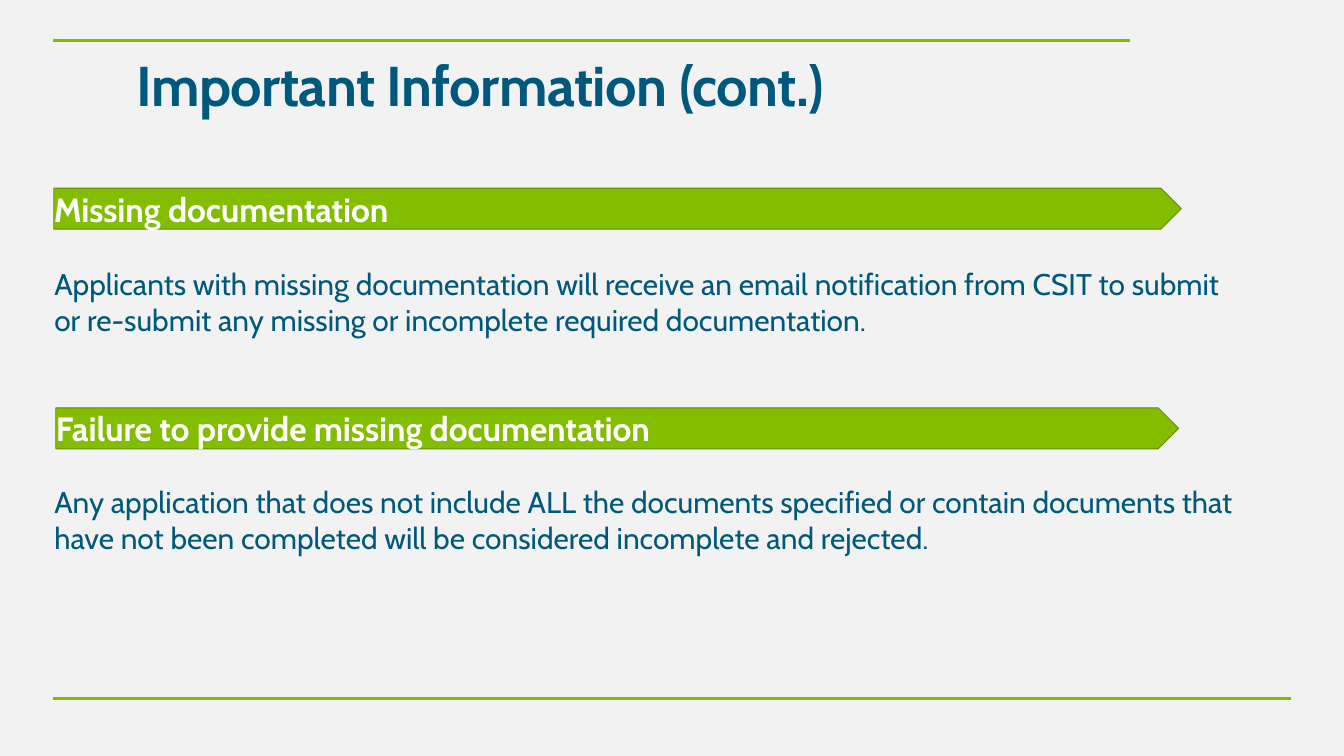
from pptx import Presentation
from pptx import util as u
from pptx.dml.color import RGBColor
from pptx.enum import shapes, text
from pptx.oxml.ns import qn
from lxml import etree

COLORS = {
    "background": "F2F2F2",
    "rule": "84BD00",
    "bar": "83BD00",
    "bar_edge": "618C00",
    "title": "00597C",
    "body": "00587B",
    "heading": "FFFFFF",
}
FONT = "Cabin"
COLUMNS, ROWS = 20, 11.25

SECTIONS = [
    {
        "heading": "Missing documentation",
        "bar": (0.8, 2.8, 16.78, 0.61),
        "body": "Applicants with missing documentation will receive an email notification "
                "from CSIT to submit or re-submit any missing or incomplete required documentation.",
        "body_box": (0.71, 3.9, 17.78, 1.18),
    },
    {
        "heading": "Failure to provide missing documentation",
        "bar": (0.83, 6.07, 16.71, 0.61),
        "body": "Any application that does not include ALL the documents specified or contain "
                "documents that have not been completed will be considered incomplete and rejected.",
        "body_box": (0.71, 7.15, 18.25, 1.18),
    },
]


def color(name):
    return RGBColor.from_string(COLORS[name])


def write(tf, content, *, size, fill, bold=False, spacing=0, inset=None,
          anchor=text.MSO_ANCHOR.TOP):
    tf.word_wrap = True
    tf.auto_size = text.MSO_AUTO_SIZE.NONE
    tf.vertical_anchor = anchor
    if inset is not None:
        tf.margin_left = tf.margin_right = tf.margin_top = tf.margin_bottom = u.Inches(inset)
    p = tf.paragraphs[0]
    p.alignment = text.PP_ALIGN.LEFT
    r = p.add_run()
    r.text = content
    r.font.name, r.font.size, r.font.bold = FONT, u.Pt(size), bold
    r.font.color.rgb = color(fill)
    if spacing:
        r.font._element.set("spc", str(round(spacing * 100)))


class Deck:
    """Holds the grid, the style and the current slide."""

    def __init__(self):
        self.prs = Presentation()
        self.prs.slide_width, self.prs.slide_height = u.Inches(20), u.Inches(11.25)
        self.column = self.prs.slide_width / COLUMNS
        self.row = self.prs.slide_height / ROWS
        self.s = self.prs.slides.add_slide(self.prs.slide_layouts[5])
        fill = self.s.background.fill
        fill.solid()
        fill.fore_color.rgb = color("background")

    def box(self, x, y, w, h):
        return (round(x * self.column), round(y * self.row),
                round(w * self.column), round(h * self.row))

    def rule(self, left, right, y):
        x1, y1, w, _ = self.box(left, y, right - left, 0)
        line = self.s.shapes.add_connector(shapes.MSO_CONNECTOR.STRAIGHT, x1, y1, x1 + w, y1)
        line.line.color.rgb, line.line.width = color("rule"), u.Pt(3)
        etree.SubElement(line._element.spPr, qn("a:effectLst"))

    def title(self, content, box):
        sp = self.s.shapes.title
        sp.left, sp.top, sp.width, sp.height = self.box(*box)
        write(sp.text_frame, content, size=60, fill="title", bold=True, spacing=-0.6,
              inset=0, anchor=text.MSO_ANCHOR.MIDDLE)

    def bar(self, content, box):
        sp = self.s.shapes.add_shape(shapes.MSO_SHAPE.PENTAGON, *self.box(*box))
        sp.shadow.inherit = False
        sp.fill.solid()
        sp.fill.fore_color.rgb = color("bar")
        sp.line.color.rgb, sp.line.width = color("bar_edge"), u.Pt(1)
        write(sp.text_frame, content, size=36, fill="heading", bold=True, spacing=-0.1,
              inset=0, anchor=text.MSO_ANCHOR.MIDDLE)

    def body(self, content, box):
        sp = self.s.shapes.add_textbox(*self.box(*box))
        write(sp.text_frame, content, size=32, fill="body")


def main():
    deck = Deck()
    deck.rule(0.79, 16.81, 0.6)
    deck.rule(0.79, 19.21, 10.4)
    deck.title("Important Information (cont.)", (2.03, 0.74, 11.76, 1.01))
    for section in SECTIONS:
        deck.bar(section["heading"], section["bar"])
        deck.body(section["body"], section["body_box"])
    deck.prs.save("out.pptx")


if __name__ == "__main__":
    main()
